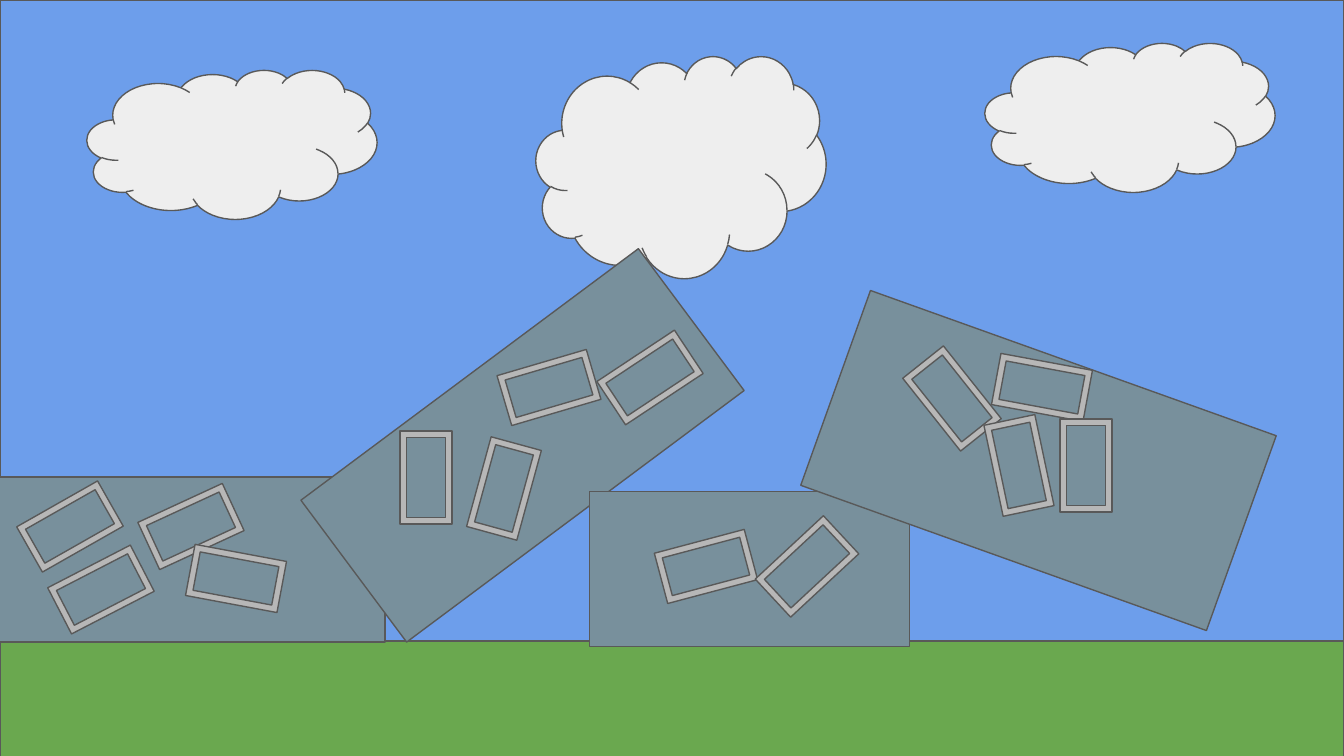
from dataclasses import dataclass

from pptx import Presentation
from pptx.dml.color import RGBColor
from pptx.enum.shapes import MSO_SHAPE
from pptx.slide import Slide
from pptx.util import Emu, Pt

EMU_PER_PX = 914400 / 134.4
SLIDE_WIDTH, SLIDE_HEIGHT = 1344, 756
HORIZON = 641
WINDOW_WIDTH, WINDOW_HEIGHT = 52, 93


@dataclass(frozen=True)
class Theme:
    grass: str = "6AA84F"
    sky: str = "6D9EEB"
    cloud: str = "EEEEEE"
    wall: str = "78909C"
    window: str = "B7B7B7"
    outline: str = "595959"
    outline_width: float = 0.75


@dataclass(frozen=True)
class Part:
    """A piece of the scene: unrotated box in px, then clockwise degrees."""
    left: int
    top: int
    width: int
    height: int
    rotation: float = 0


THEME = Theme()

GRASS = Part(0, HORIZON, SLIDE_WIDTH, 122)
SKY = Part(0, 0, SLIDE_WIDTH, HORIZON)

CLOUDS = [
    Part(87, 70, 290, 149),
    Part(536, 56, 290, 222),
    Part(985, 43, 290, 149),
]

BUILDINGS = [
    Part(109, 366, 165, 387, 270),
    Part(434, 235, 177, 421, 53.3),
    Part(672, 409, 155, 320, 90),
    Part(935, 245, 207, 431, 289.7),
]

WINDOWS = [
    Part(left, top, WINDOW_WIDTH, WINDOW_HEIGHT, rotation)
    for left, top, rotation in [
        # Far left building
        (44, 480, 60.4), (165, 480, 245.2), (75, 543, 242.7), (210, 532, 280.6),
        # Tall leaning building
        (523, 341, 73.6), (624, 331, 56.5), (478, 442, 15.3), (400, 431, 0),
        # Low middle building
        (680, 520, 75.1), (781, 520, 47.1),
        # Right building
        (1016, 341, 280.5), (926, 352, 321.5), (1060, 419, 0), (993, 419, 348.1),
    ]
]


def px(length: int) -> Emu:
    return Emu(round(length * EMU_PER_PX))


def draw_part(slide: Slide, part: Part, outline: MSO_SHAPE, color: str) -> None:
    shape = slide.shapes.add_shape(
        outline, px(part.left), px(part.top), px(part.width), px(part.height)
    )
    shape.rotation = part.rotation
    shape.shadow.inherit = False
    shape.fill.solid()
    shape.line.fill.solid()
    formats = {
        shape.fill.fore_color: {"rgb": RGBColor.from_string(color)},
        shape.line.fill.fore_color: {"rgb": RGBColor.from_string(THEME.outline)},
        shape.line: {"width": Pt(THEME.outline_width)},
    }
    for target, values in formats.items():
        for name, value in values.items():
            setattr(target, name, value)


def main() -> None:
    deck = Presentation()
    deck.slide_width, deck.slide_height = px(SLIDE_WIDTH), px(SLIDE_HEIGHT)
    slide = deck.slides.add_slide(deck.slide_layouts[6])

    layers = [
        ([GRASS], MSO_SHAPE.RECTANGLE, THEME.grass),
        ([SKY], MSO_SHAPE.RECTANGLE, THEME.sky),
        (CLOUDS, MSO_SHAPE.CLOUD, THEME.cloud),
        (BUILDINGS, MSO_SHAPE.RECTANGLE, THEME.wall),
        (WINDOWS, MSO_SHAPE.FRAME, THEME.window),
    ]
    for parts, outline, color in layers:
        for part in parts:
            draw_part(slide, part, outline, color)

    deck.save("out.pptx")


if __name__ == "__main__":
    main()
